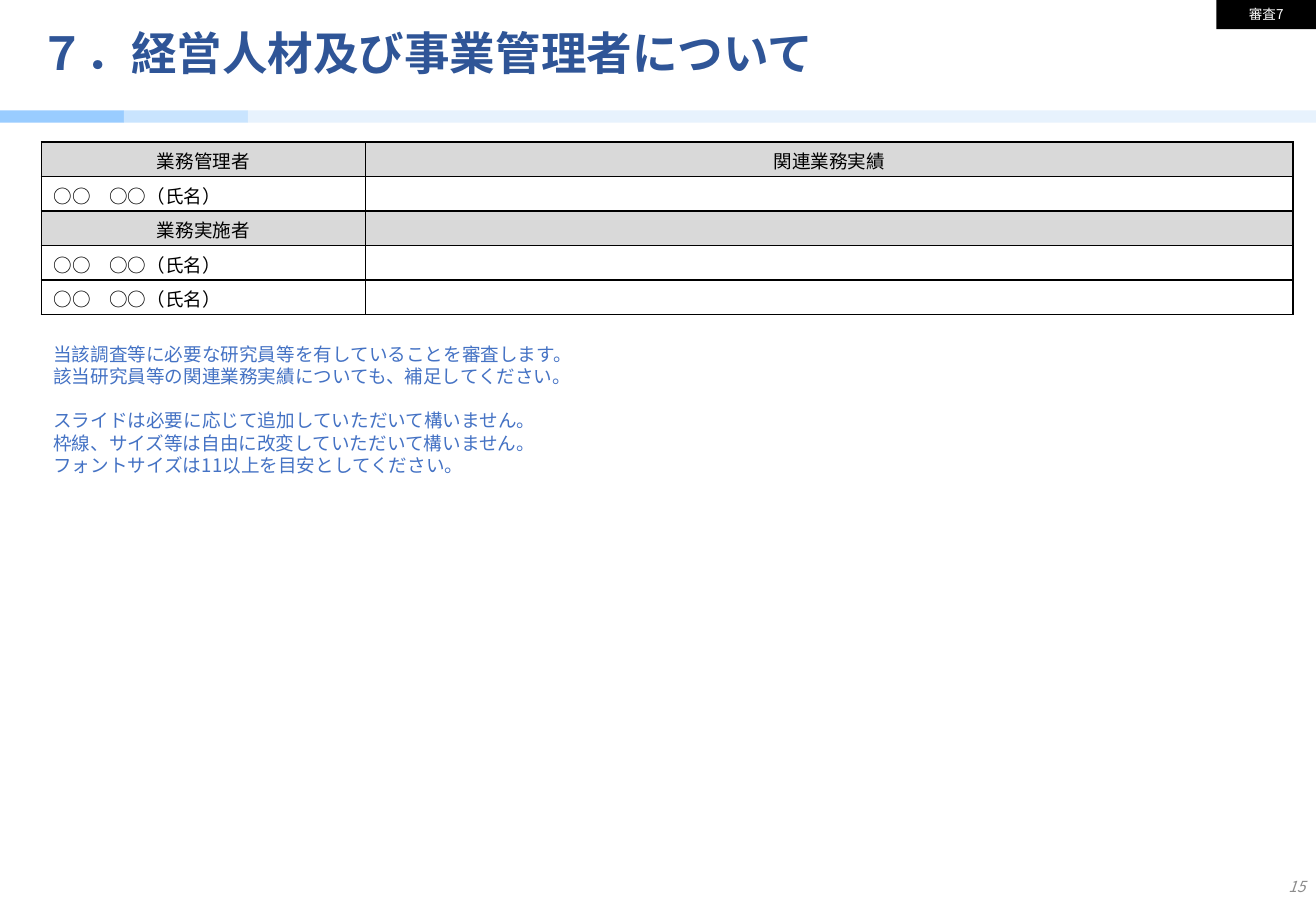
from pptx import Presentation
from pptx.dml.color import RGBColor
from pptx.enum import shapes, text
from pptx.oxml import parse_xml
from pptx.oxml.ns import nsdecls, qn
from pptx.util import Inches, Pt

TITLE = "７．経営人材及び事業管理者について"
BADGE = "審査7"
PAGE = "15"
NAME = "○○　○○（氏名）"
ROWS = [
    ("業務管理者", "関連業務実績"),
    (NAME, ""),
    ("業務実施者", ""),
    (NAME, ""),
    (NAME, ""),
]
HEADER_ROWS = (0, 2)
NOTES = [
    ["当該調査等に必要な研究員等を有していることを審査します。",
     "該当研究員等の関連業務実績についても、補足してください。"],
    ["スライドは必要に応じて追加していただいて構いません。",
     "枠線、サイズ等は自由に改変していただいて構いません。",
     "フォントサイズは11以上を目安としてください。"],
]
BAND = [(1.02, "99CCFF"), (1.02, "C9E4FE"), (8.79, "E7F2FD")]
COLS = (2.67, 7.63)
TABLE_HEIGHT = 1.42

THEME = {
    "font": "Noto Sans CJK JP",
    "header": "D9D9D9",
    "border": "000000",
    "badge_fill": "000000",
    "title": {"size": 27, "leading": 1.08, "color": "2F5597", "bold": True},
    "page": {"size": 9, "leading": 1.2, "color": "8C8C8C", "italic": True},
    "badge": {"size": 8, "leading": 1.2, "color": "FFFFFF"},
    "note": {"size": 11, "leading": 1.2, "color": "4472C4"},
    "cell": {"size": 11, "leading": 1.2, "color": "000000"},
}
LEFT, CENTER, RIGHT = text.PP_ALIGN.LEFT, text.PP_ALIGN.CENTER, text.PP_ALIGN.RIGHT
TOP, MIDDLE = text.MSO_ANCHOR.TOP, text.MSO_ANCHOR.MIDDLE


def write(p, content, style, align=LEFT):
    fmt = dict(THEME[style])
    color, size, leading = (fmt.pop(key) for key in ("color", "size", "leading"))
    p.alignment = align
    p.line_spacing = Pt(round(size * leading, 1))
    if not content:
        p._p.append(parse_xml(f'<a:endParaRPr {nsdecls("a")} sz="{size * 100}"/>'))
        return
    r = p.add_run()
    r.text = content
    fmt.update(name=THEME["font"], size=Pt(size))
    for key, value in fmt.items():
        setattr(r.font, key, value)
    r.font.color.rgb = RGBColor.from_string(color)
    r._r.get_or_add_rPr().find(qn("a:latin")).addnext(
        parse_xml(f'<a:ea {nsdecls("a")} typeface="{THEME["font"]}"/>'))


def add_text(s, box, groups, style, align=LEFT, anchor=TOP):
    tf = s.shapes.add_textbox(*map(Inches, box)).text_frame
    tf.word_wrap = True
    tf.vertical_anchor = anchor
    p = tf.paragraphs[0]
    for g, lines in enumerate(groups):
        for i, line in enumerate(lines):
            if g or i:
                p = tf.add_paragraph()
            write(p, line, style, align)
            if g and not i:
                p.space_before = p.line_spacing


def add_rect(s, box, color):
    sp = s.shapes.add_shape(shapes.MSO_SHAPE.RECTANGLE, *map(Inches, box))
    sp.shadow.inherit = False
    sp.fill.solid()
    sp.fill.fore_color.rgb = RGBColor.from_string(color)
    sp.line.fill.background()
    return sp


def add_borders(cell):
    tc_pr = cell._tc.get_or_add_tcPr()
    for i, side in enumerate(("lnL", "lnR", "lnT", "lnB")):
        tc_pr.insert(i, parse_xml(
            f'<a:{side} {nsdecls("a")} w="{Pt(1)}"><a:solidFill>'
            f'<a:srgbClr val="{THEME["border"]}"/></a:solidFill></a:{side}>'))


def add_staff_table(s):
    box = (0.34, 1.17, sum(COLS), TABLE_HEIGHT)
    table = s.shapes.add_table(len(ROWS), len(COLS), *map(Inches, box)).table
    table.first_row = table.horz_banding = False
    for col, width in zip(table.columns, COLS):
        col.width = Inches(width)
    for i, row in enumerate(ROWS):
        header = i in HEADER_ROWS
        for j, content in enumerate(row):
            cell = table.cell(i, j)
            cell.vertical_anchor = MIDDLE
            cell.margin_top, cell.margin_bottom = Inches(0.08), Inches(0.02)
            if header:
                cell.fill.solid()
                cell.fill.fore_color.rgb = RGBColor.from_string(THEME["header"])
            else:
                cell.fill.background()
            write(cell.text_frame.paragraphs[0], content, "cell", CENTER if header else LEFT)
            add_borders(cell)


def main():
    prs = Presentation()
    prs.slide_width, prs.slide_height = Inches(10.83), Inches(7.5)
    s = prs.slides.add_slide(prs.slide_layouts[6])
    x = 0
    for width, color in BAND:
        add_rect(s, (x, 0.91, width, 0.1), color)
        x += width
    add_text(s, (0.23, 0.07, 9.98, 0.76), [[TITLE]], "title", anchor=MIDDLE)
    add_text(s, (9.85, 7.1, 0.99, 0.4), [[PAGE]], "page", RIGHT, MIDDLE)
    badge = add_rect(s, (10.01, 0, 0.82, 0.24), THEME["badge_fill"])
    badge.text_frame.vertical_anchor = TOP
    write(badge.text_frame.paragraphs[0], BADGE, "badge", CENTER)
    add_text(s, (0.34, 2.77, 10.19, 1.21), NOTES, "note")
    add_staff_table(s)
    prs.save("out.pptx")


if __name__ == "__main__":
    main()
